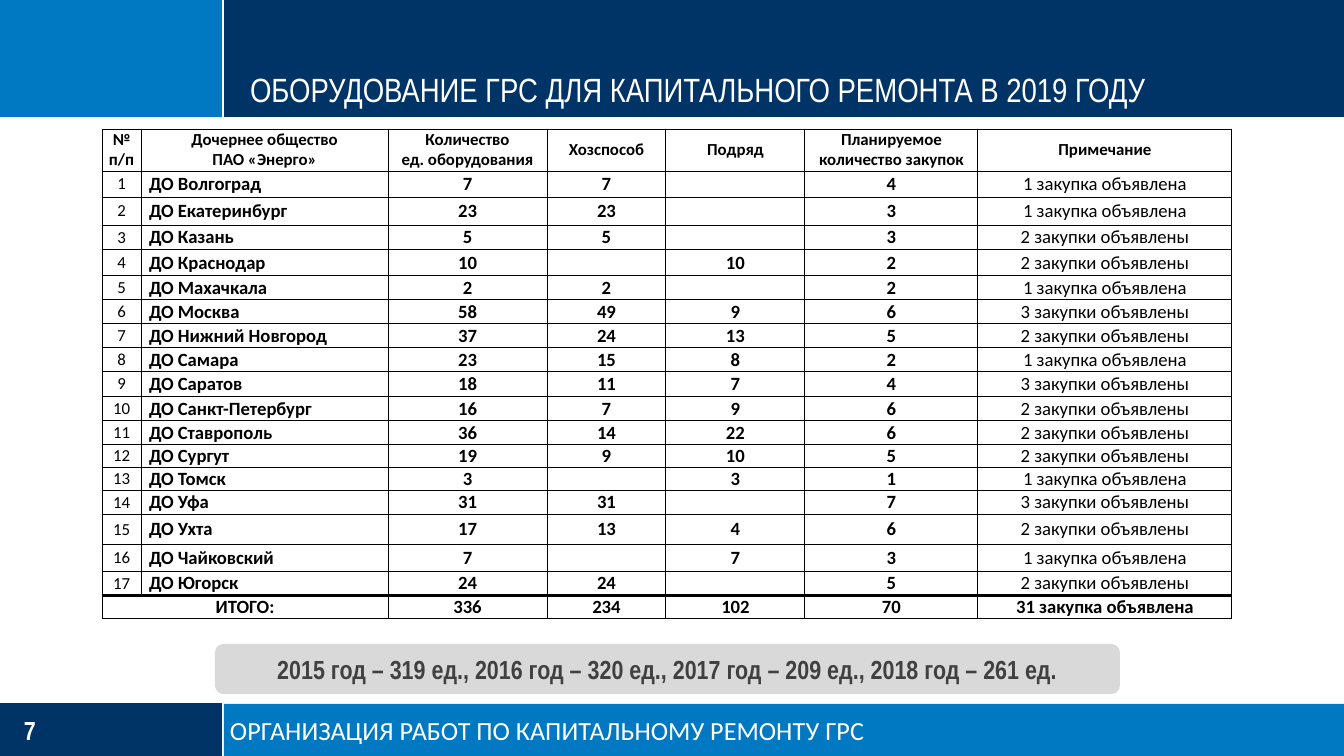
import copy
from typing import NamedTuple

import lxml.etree
import pptx
import pptx.dml.color
import pptx.enum.shapes
import pptx.enum.text
import pptx.oxml
import pptx.oxml.ns
import pptx.util

WIDE, HIGH = 1344, 756
SCALE = 9144000 / WIDE
NAVY, BLUE, WHITE, BLACK = "003366", "0079C2", "FFFFFF", "000000"
NARROW, SANS = "Arial Narrow", "Calibri"
ALIGN = pptx.enum.text.PP_ALIGN
ANCHOR = pptx.enum.text.MSO_ANCHOR
SHAPE = pptx.enum.shapes.MSO_SHAPE


class Box(NamedTuple):
    left: int
    top: int
    width: int
    height: int


class Band(NamedTuple):
    box: Box
    fill: str


class Rule(NamedTuple):
    x1: int
    y1: int
    x2: int
    y2: int


class Row(NamedTuple):
    name: str
    units: str
    own: str
    hired: str
    plan: str
    note: str


BANDS = [
    Band(Box(0, 0, WIDE, 117), NAVY),
    Band(Box(0, 0, 224, 117), BLUE),
    Band(Box(0, 703, 224, 53), NAVY),
]
RULES = [Rule(0, 702, WIDE, 702), Rule(223, 702, 223, HIGH),
         Rule(223, 0, 223, 118), Rule(0, 118, WIDE, 118)]

ONE = "1 закупка объявлена"
TWO = "2 закупки объявлены"
THREE = "3 закупки объявлены"
HEADS = ["№\vп/п", "Дочернее общество\nПАО «Энерго»", "Количество\vед. оборудования",
         "Хозспособ", "Подряд", "Планируемое количество закупок", "Примечание"]
ROWS = [
    Row("ДО Волгоград", "7", "7", "", "4", ONE),
    Row("ДО Екатеринбург", "23", "23", "", "3", ONE),
    Row("ДО Казань", "5", "5", "", "3", TWO),
    Row("ДО Краснодар", "10", "", "10", "2", TWO),
    Row("ДО Махачкала", "2", "2", "", "2", ONE),
    Row("ДО Москва", "58", "49", "9", "6", THREE),
    Row("ДО Нижний Новгород", "37", "24", "13", "5", TWO),
    Row("ДО Самара", "23", "15", "8", "2", ONE),
    Row("ДО Саратов", "18", "11", "7", "4", THREE),
    Row("ДО Санкт-Петербург", "16", "7", "9", "6", TWO),
    Row("ДО Ставрополь", "36", "14", "22", "6", TWO),
    Row("ДО Сургут", "19", "9", "10", "5", TWO),
    Row("ДО Томск", "3", "", "3", "1", ONE),
    Row("ДО Уфа", "31", "31", "", "7", THREE),
    Row("ДО Ухта", "17", "13", "4", "6", TWO),
    Row("ДО Чайковский", "7", "", "7", "3", ONE),
    Row("ДО Югорск", "24", "24", "", "5", TWO),
]
TOTAL = ["ИТОГО:", "", "336", "234", "102", "70", "31 закупка объявлена"]
COLS = [39, 247, 159, 119, 139, 173, 254]
TALL = [42, 26, 28, 25, 26, 24, 24, 24, 24, 25, 24, 24, 23, 23, 24, 30, 27, 24, 23]


def px(size: int) -> int:
    return round(size * SCALE)


def place(box: Box) -> list[int]:
    return [px(size) for size in box]


def paint(code: str) -> pptx.dml.color.RGBColor:
    return pptx.dml.color.RGBColor.from_string(code)


def write(frame, text: str, *, size: int, font: str = SANS, color: str = BLACK,
          bold: bool = False, align=ALIGN.LEFT) -> None:
    """Fill a frame: a newline starts a paragraph, a vertical tab breaks a line."""
    frame.text = text
    for par in frame.paragraphs:
        par.alignment = align
        for run in par.runs:
            face = run.font
            face.size, face.name, face.bold = pptx.util.Pt(size), font, bold
            face.color.rgb = paint(color)
        for mark in par._p.findall(pptx.oxml.ns.qn("a:br")):
            mark.append(copy.deepcopy(par.runs[0].font._element))
        if not par.runs:
            end = lxml.etree.SubElement(par._p, pptx.oxml.ns.qn("a:endParaRPr"))
            end.set("sz", str(size * 100))


def inset(frame, left: int = 0) -> None:
    frame.margin_left = px(left)
    frame.margin_top = frame.margin_right = frame.margin_bottom = 0


def block(slide, box: Box, fill: str, kind=SHAPE.RECTANGLE):
    shape = slide.shapes.add_shape(kind, *place(box))
    shape.shadow.inherit = False
    shape.fill.solid()
    shape.fill.fore_color.rgb = paint(fill)
    shape.line.fill.background()
    return shape


def draw(slide, rule: Rule) -> None:
    line = slide.shapes.add_connector(
        pptx.enum.shapes.MSO_CONNECTOR.STRAIGHT, *[px(spot) for spot in rule])
    line.line.color.rgb = paint(WHITE)
    line.line.width = pptx.util.Pt(1.25)
    lxml.etree.SubElement(line._element.spPr, pptx.oxml.ns.qn("a:effectLst"))


def edge(cell, top: float, base: float) -> None:
    props = cell._tc.get_or_add_tcPr()
    for side, width in zip("LRTB", (0.5, 0.5, top, base)):
        props.append(pptx.oxml.parse_xml(
            f'<a:ln{side} {pptx.oxml.ns.nsdecls("a")} w="{pptx.util.Pt(width)}">'
            f'<a:solidFill><a:srgbClr val="{BLACK}"/></a:solidFill></a:ln{side}>'))


def chart(slide) -> None:
    """Draw the equipment table."""
    body = [[str(num), *row] for num, row in enumerate(ROWS, 1)]
    cells = [HEADS, *body, TOTAL]
    last = len(cells) - 1
    box = Box(102, 129, sum(COLS), sum(TALL))
    table = slide.shapes.add_table(len(cells), len(COLS), *place(box)).table
    table.first_row = table.horz_banding = False
    for col, width in zip(table.columns, COLS):
        col.width = px(width)
    for row, height in zip(table.rows, TALL):
        row.height = px(height)
    for i, texts in enumerate(cells):
        inner = 0 < i < last
        for j, text in enumerate(texts):
            cell = table.cell(i, j)
            named = inner and j == 1
            inset(cell, 8 if named else 0)
            cell.vertical_anchor = ANCHOR.MIDDLE
            write(cell.text_frame, text, size=9 if i == 0 or inner and j == 0 else 10,
                  bold=not (inner and j in (0, 6)),
                  align=ALIGN.LEFT if named else ALIGN.CENTER)
            edge(cell, 2 if i == last else 0.5, 2 if i == last - 1 else 0.5)
            cell.fill.background()
    table.cell(last, 0).merge(table.cell(last, 1))


def main() -> None:
    deck = pptx.Presentation()
    deck.slide_width, deck.slide_height = px(WIDE), px(HIGH)
    slide = deck.slides.add_slide(deck.slide_layouts[5])

    # Bands and white rules
    for band in BANDS:
        block(slide, *band)
    for rule in RULES:
        draw(slide, rule)

    # Footer: page number and section name
    page = slide.shapes.add_textbox(*place(Box(24, 714, 136, 32))).text_frame
    inset(page)
    page.word_wrap = True
    page.vertical_anchor = ANCHOR.MIDDLE
    write(page, "7", size=14, font=NARROW, color=WHITE, bold=True)
    foot = block(slide, Box(224, 704, 1120, 52), BLUE).text_frame
    inset(foot, 6)
    foot.word_wrap = False
    write(foot, "ОРГАНИЗАЦИЯ РАБОТ ПО КАПИТАЛЬНОМУ РЕМОНТУ ГРС", size=14, color=WHITE)

    # Title, raised above the bands
    title = slide.shapes.title
    slide.shapes._spTree.append(title._element)
    title.left, title.top, title.width, title.height = place(Box(250, 0, 1070, 109))
    frame = title.text_frame
    inset(frame)
    frame.auto_size = pptx.enum.text.MSO_AUTO_SIZE.NONE
    frame.vertical_anchor = ANCHOR.BOTTOM
    write(frame, "ОБОРУДОВАНИЕ ГРС ДЛЯ КАПИТАЛЬНОГО РЕМОНТА В 2019 ГОДУ",
          size=18, font=NARROW, color=WHITE)

    # Totals of past years
    past = block(slide, Box(215, 644, 905, 50), "D9D9D9", SHAPE.ROUNDED_RECTANGLE)
    write(past.text_frame,
          "2015 год – 319 ед., 2016 год – 320 ед., 2017 год – 209 ед., 2018 год – 261 ед.",
          size=14, font=NARROW, color="404040", bold=True, align=ALIGN.CENTER)

    chart(slide)
    deck.save("out.pptx")


if __name__ == "__main__":
    main()
